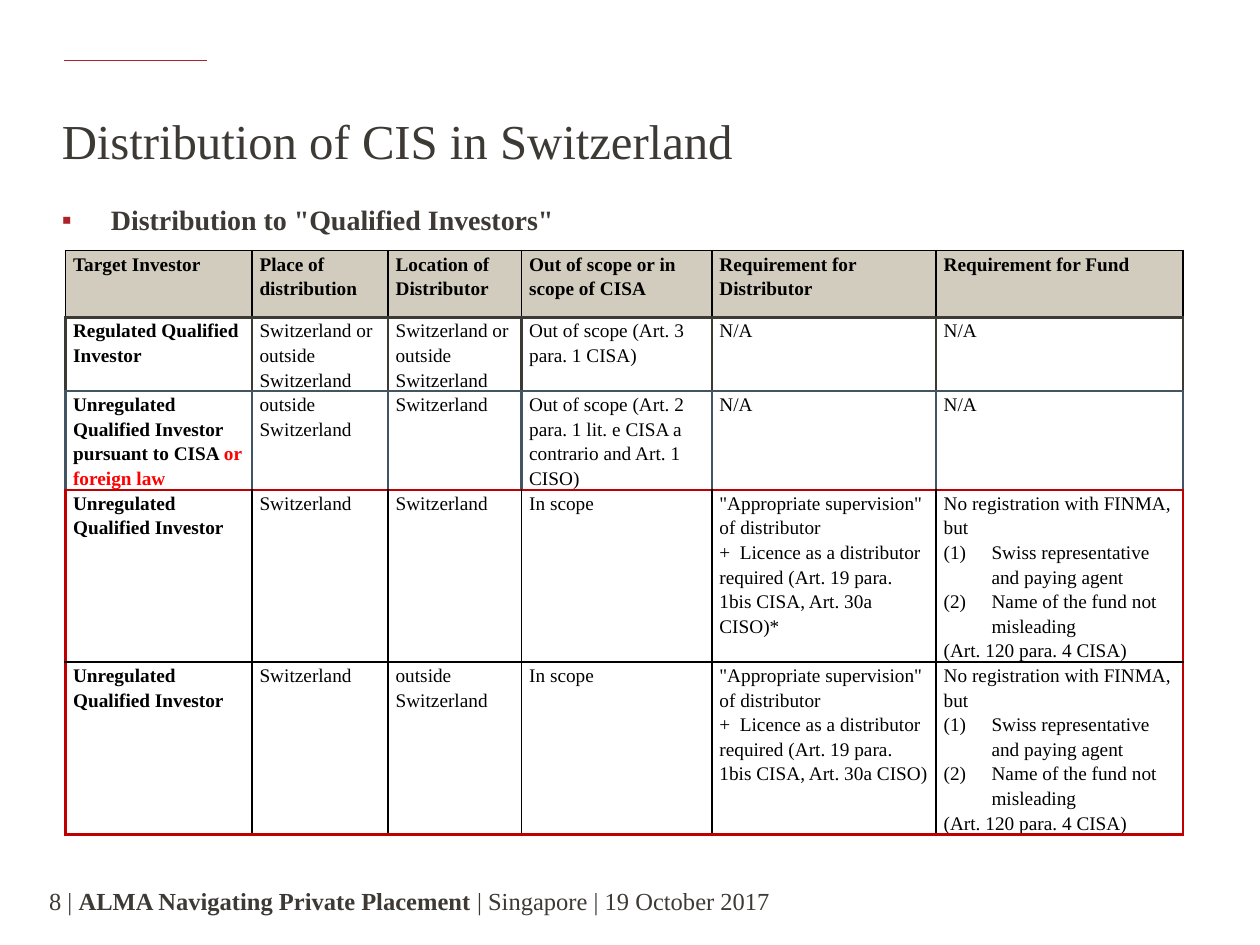
"""Build a slide on fund distribution to qualified investors in Switzerland."""
from dataclasses import dataclass

from lxml import etree
from pptx import Presentation
from pptx import util as u
from pptx.dml.color import RGBColor
from pptx.enum import shapes, text
from pptx.oxml.ns import qn

WIDE, HIGH = u.Inches(10), u.Inches(7.5)
FACE = "Times New Roman"
INK = RGBColor(0x3D, 0x39, 0x35)
BLACK = RGBColor(0, 0, 0)
WHITE = RGBColor(255, 255, 255)
SAND = RGBColor(0xD1, 0xCC, 0xBD)
SLATE = RGBColor(0x42, 0x55, 0x63)
RUBY = RGBColor(0xAB, 0x23, 0x28)
CRIMSON = RGBColor(0xC0, 0, 0)
RED = RGBColor(255, 0, 0)


@dataclass(frozen=True)
class Span:
    text: str
    bold: bool = False
    tint: RGBColor = BLACK


@dataclass(frozen=True)
class Para:
    spans: tuple[Span, ...]
    count: bool = False


@dataclass(frozen=True)
class Edge:
    tint: RGBColor
    size: float = 1.5


@dataclass(frozen=True)
class Row:
    high: float
    outer: Edge
    inner: Edge
    base: Edge
    cells: tuple[tuple[Para, ...], ...]


THIN = Edge(BLACK, 1)
DARK, BLUE, ALERT = Edge(INK), Edge(SLATE), Edge(CRIMSON)
COLS = (14.8, 10.8, 10.6, 15.1, 17.8, 19.6)


def across(share: float) -> int:
    """Turn a percentage of the slide's width into a length."""
    return round(WIDE * share / 100)


def down(share: float) -> int:
    """Turn a percentage of the slide's height into a length."""
    return round(HIGH * share / 100)


def place(shape, left: float, top: float, wide: float, high: float) -> None:
    """Set a shape's place in percentages of the slide."""
    spot = dict(left=across(left), top=down(top), width=across(wide), height=down(high))
    for name, value in spot.items():
        setattr(shape, name, value)


def frame(item, **form) -> None:
    """Apply format values to a text frame, paragraph or cell."""
    for name, value in form.items():
        setattr(item, name, value)


def write(para, spans: tuple[Span, ...], size: float) -> None:
    """Add formatted runs to a paragraph."""
    for span in spans:
        run = para.add_run()
        run.text = span.text
        frame(run.font, name=FACE, size=u.Pt(size), bold=span.bold)
        run.font.color.rgb = span.tint


def hang(para, depth: float) -> etree._Element:
    """Give a paragraph a hanging indent and return its properties."""
    props = para._p.get_or_add_pPr()
    props.set("marL", str(u.Inches(depth)))
    props.set("indent", str(-u.Inches(depth)))
    return props


def add(parent, tag: str, **values: str):
    """Append an XML element."""
    return etree.SubElement(parent, qn(tag), values)


def plain(*lines: str, bold: bool = False) -> tuple[Para, ...]:
    """Make one paragraph for each line."""
    return tuple(Para((Span(line, bold),)) for line in lines)


def duty(mark: str = "") -> tuple[Para, ...]:
    """State the requirement for a distributor."""
    return plain(
        '"Appropriate supervision" of distributor',
        f"+  Licence as a distributor required (Art. 19 para. 1bis CISA, Art. 30a CISO){mark}",
    )


FUND = (
    *plain("No registration with FINMA, but"),
    Para((Span("Swiss representative and paying agent"),), True),
    Para((Span("Name of the fund not misleading"),), True),
    *plain("(Art. 120 para. 4 CISA)"),
)
HEADS = ("Target Investor", "Place of distribution", "Location of Distributor",
         "Out of scope or in scope of CISA", "Requirement for Distributor",
         "Requirement for Fund")
NONE, HOME = plain("N/A"), plain("Switzerland")
AWAY, BOTH = plain("outside Switzerland"), plain("Switzerland or outside Switzerland")
LOOSE = plain("Unregulated Qualified Investor", bold=True)
FOREIGN = (Para((Span("Unregulated Qualified Investor pursuant to CISA ", True),
                 Span("or foreign law", True, RED))),)
ROWS = (
    Row(7.07, THIN, THIN, DARK, tuple(plain(head, bold=True) for head in HEADS)),
    Row(7.6, DARK, DARK, BLUE,
        (plain("Regulated Qualified Investor", bold=True), BOTH, BOTH,
         plain("Out of scope (Art. 3 para. 1 CISA)"), NONE, NONE)),
    Row(10.27, BLUE, BLUE, ALERT,
        (FOREIGN, AWAY, HOME,
         plain("Out of scope (Art. 2 para. 1 lit. e CISA a contrario and Art. 1 CISO)"),
         NONE, NONE)),
    Row(17.87, ALERT, THIN, THIN,
        (LOOSE, HOME, HOME, plain("In scope"), duty("*"), FUND)),
    Row(17.87, ALERT, THIN, ALERT,
        (LOOSE, HOME, AWAY, plain("In scope"), duty(), FUND)),
)


def border(cell, **edges: Edge) -> None:
    """Draw the borders of a cell."""
    props = cell._tc.get_or_add_tcPr()
    for side, edge in edges.items():
        line = add(props, f"a:ln{side}", w=str(u.Pt(edge.size)))
        add(add(line, "a:solidFill"), "a:srgbClr", val=str(edge.tint))


def fill(cell, paras: tuple[Para, ...]) -> None:
    """Write the paragraphs of a cell."""
    frame(cell, margin_left=u.Inches(0.06), margin_right=u.Inches(0.06),
          margin_top=0, margin_bottom=0)
    body = cell.text_frame
    for i, item in enumerate(paras):
        para = body.add_paragraph() if i else body.paragraphs[0]
        if item.count:
            add(hang(para, 0.38), "a:buAutoNum", type="arabicParenBoth")
        para.line_spacing = 1.15
        write(para, item.spans, 11)


def grid(slide) -> None:
    """Draw the table of requirements."""
    table = slide.shapes.add_table(
        len(ROWS), len(COLS), across(5.2), down(26.53), across(sum(COLS)),
        down(sum(row.high for row in ROWS))).table
    frame(table, first_row=False, horz_banding=False)
    for col, wide in zip(table.columns, COLS):
        col.width = across(wide)
    top, last = THIN, len(COLS) - 1
    for r, row in enumerate(ROWS):
        table.rows[r].height = down(row.high)
        for c, paras in enumerate(row.cells):
            cell = table.cell(r, c)
            fill(cell, paras)
            border(cell, L=row.inner if c else row.outer,
                   R=row.outer if c == last else row.inner, T=top, B=row.base)
            cell.fill.solid()
            cell.fill.fore_color.rgb = WHITE if r else SAND
        top = row.base


def main() -> None:
    """Build and save the slide."""
    deck = Presentation()
    frame(deck, slide_width=WIDE, slide_height=HIGH)
    slide = deck.slides.add_slide(deck.slide_layouts[1])
    title, body = slide.placeholders
    fit = dict(word_wrap=True, auto_size=text.MSO_AUTO_SIZE.NONE)

    rule = slide.shapes.add_connector(
        shapes.MSO_CONNECTOR.STRAIGHT, across(16.4), down(6.4), across(5.1), down(6.4))
    rule.line.color.rgb = RUBY
    rule.line.width = u.Pt(1)
    add(rule._element.spPr, "a:effectLst")

    place(title, 3.9, 12.13, 91.4, 10.4)
    frame(title.text_frame, vertical_anchor=text.MSO_ANCHOR.TOP, **fit)
    para = title.text_frame.paragraphs[0]
    frame(para, alignment=text.PP_ALIGN.LEFT, line_spacing=u.Pt(27.7))
    write(para, (Span("Distribution of CIS in Switzerland", tint=INK),), 27.9)

    place(body, 3.9, 20.8, 91.4, 64.53)
    frame(body.text_frame, **fit)
    para = body.text_frame.paragraphs[0]
    props = hang(para, 0.39)
    add(add(props, "a:buClr"), "a:srgbClr", val=str(RUBY))
    add(props, "a:buFont", typeface=FACE)
    add(props, "a:buChar", char="▪")
    frame(para, space_before=u.Pt(0), space_after=u.Pt(6))
    write(para, (Span('Distribution to "Qualified Investors"', True, INK),), 16)

    grid(slide)

    foot = slide.shapes.add_textbox(across(3.9), down(93.73), across(63.4), down(3.07))
    frame(foot.text_frame, vertical_anchor=text.MSO_ANCHOR.MIDDLE, margin_left=0,
          margin_top=0, margin_right=u.Inches(0.1), margin_bottom=0, **fit)
    write(foot.text_frame.paragraphs[0],
          (Span("8 | ", tint=INK), Span("ALMA Navigating Private Placement ", True, INK),
           Span("| Singapore | 19 October 2017", tint=INK)), 14)
    deck.save("out.pptx")


if __name__ == "__main__":
    main()
